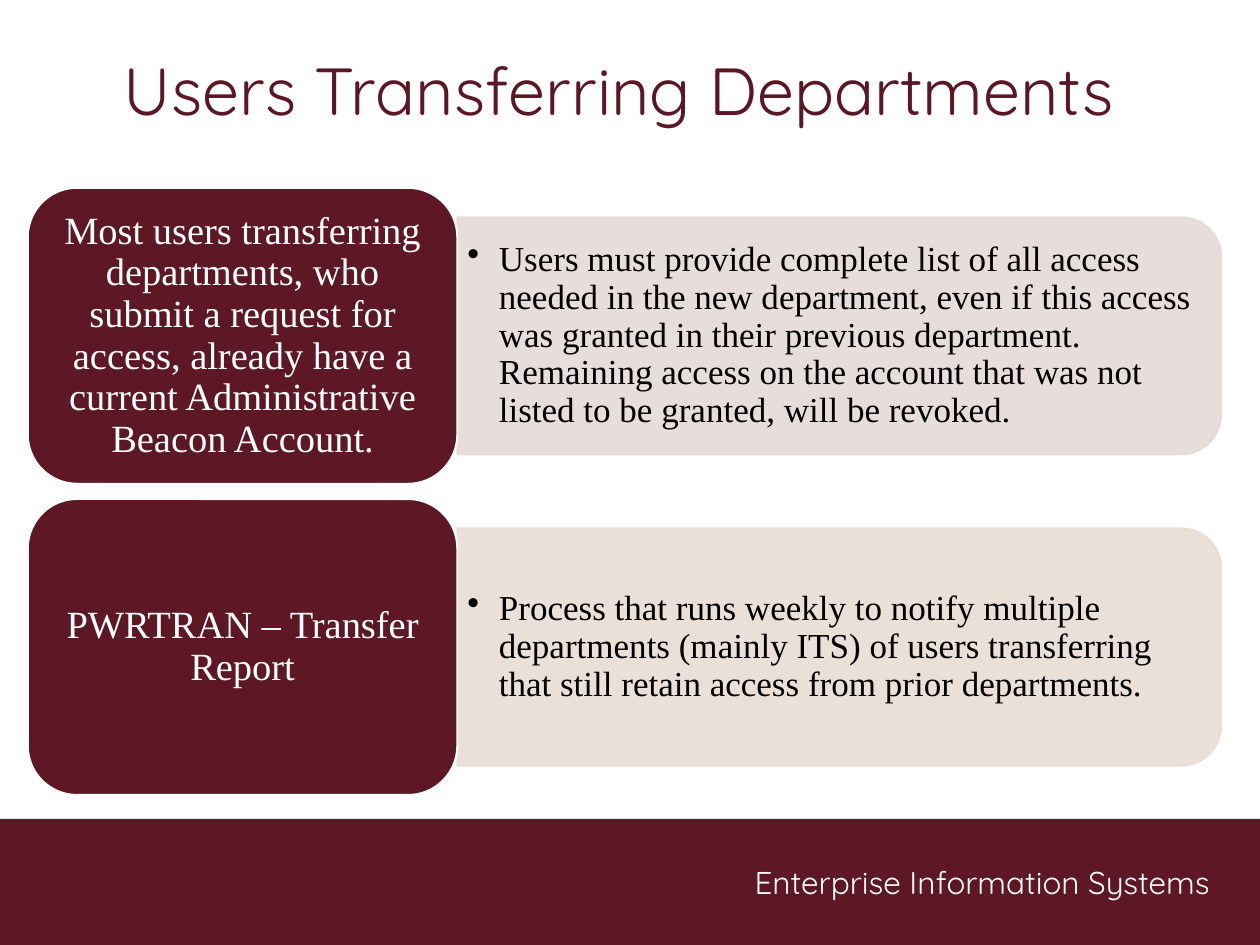
import pptx
import pptx.util
import pptx.dml.color
import pptx.enum.shapes
import pptx.enum.text
import pptx.oxml.ns
import lxml.etree

TITLE = "Users Transferring Departments"
FOOT = "Enterprise Information Systems"
ROWS = [
    ("Most users transferring departments, who submit a request for access, "
     "already have a current Administrative Beacon Account.",
     "Users must provide complete list of all access needed in the new "
     "department, even if this access was granted in their previous department. "
     "Remaining access on the account that was not listed to be granted, will be revoked.",
     "E5DAD8"),
    ("PWRTRAN – Transfer Report",
     "Process that runs weekly to notify multiple departments (mainly ITS) of "
     "users transferring that still retain access from prior departments.",
     "E9DDD4"),
]
THEME = {
    "wine": "5D1725", "head": "5D1724", "white": "FFFFFF", "black": "000000",
    "sans": "Quicksand", "serif": "Times New Roman",
    "title": 38, "label": 22, "body": 20, "foot": 18, "edge": 1.25, "alpha": 90,
}

Inches, Pt = pptx.util.Inches, pptx.util.Pt
KIND = pptx.enum.shapes.MSO_SHAPE
ALIGN = pptx.enum.text.PP_ALIGN
MID = pptx.enum.text.MSO_ANCHOR.MIDDLE
TOP = pptx.enum.text.MSO_ANCHOR.TOP
qn = pptx.oxml.ns.qn


def rgb(name):
    return pptx.dml.color.RGBColor.from_string(THEME.get(name, name))


def apply(item, form):
    for key, val in form.items():
        setattr(item, key, val)


def block(slide, kind, box, fill, edge=None, turn=0, alpha=None):
    shape = slide.shapes.add_shape(kind, *map(Inches, box))
    shape.shadow.inherit = False
    shape.rotation = turn
    shape.fill.solid()
    shape.fill.fore_color.rgb = rgb(fill)
    if edge:
        shape.line.color.rgb = rgb(edge)
        shape.line.width = Pt(THEME["edge"])
    else:
        shape.line.fill.background()
    if alpha:
        for tint in shape._element.spPr.iter(qn("a:srgbClr")):
            lxml.etree.SubElement(tint, qn("a:alpha"), val=str(alpha * 1000))


def label(slide, box, text, role, face, tone, align, pad=(0.1, 0.05),
          anchor=MID, space=None, dot=False):
    frame = slide.shapes.add_textbox(*map(Inches, box)).text_frame
    side, cap = map(Inches, pad)
    apply(frame, {"word_wrap": True, "vertical_anchor": anchor,
                  "margin_left": side, "margin_right": side,
                  "margin_top": cap, "margin_bottom": cap})
    para = frame.paragraphs[0]
    para.text = text
    apply(para, {"alignment": align, "line_spacing": space})
    if dot:
        props = para._p.get_or_add_pPr()
        props.set("marL", str(Inches(0.25)))
        props.set("indent", str(-Inches(0.25)))
        lxml.etree.SubElement(props, qn("a:buChar"), char="•")
    font = para.runs[0].font
    apply(font, {"name": THEME[face], "size": Pt(THEME[role])})
    font.color.rgb = rgb(tone)


def build():
    deck = pptx.Presentation()
    apply(deck, {"slide_width": Inches(10), "slide_height": Inches(7.5)})
    slide = deck.slides.add_slide(deck.slide_layouts[6])

    block(slide, KIND.RECTANGLE, (0, 6.5, 10, 1), "wine")
    label(slide, (5.72, 6.8, 3.98, 0.4), FOOT, "foot", "sans", "white",
          ALIGN.RIGHT, anchor=TOP)
    label(slide, (0.33, 0.3, 9.17, 0.81), TITLE, "title", "sans", "head", ALIGN.CENTER)

    left, top, wide, high, step = 0.22, 1.49, 3.41, 2.35, 2.47
    span, deep, inset = 6.06, 1.88, 0.115
    edge = left + wide
    for num, (name, body, tint) in enumerate(ROWS):
        y = top + num * step
        mid = y + high / 2
        block(slide, KIND.ROUND_2_SAME_RECTANGLE,
              (edge + (span - deep) / 2, mid - span / 2, deep, span),
              tint, tint, 90, THEME["alpha"])
        label(slide, (edge, mid - 0.85, 5.97, 1.7), body, "body", "serif", "black",
              ALIGN.LEFT, (0.08, 0.04), space=0.9, dot=True)
        block(slide, KIND.ROUNDED_RECTANGLE, (left, y, wide, high), "wine", "white")
        label(slide, (left + inset, y + inset, wide - 2 * inset, high - 2 * inset),
              name, "label", "serif", "white", ALIGN.CENTER, (0.09, 0.05), space=0.9)

    deck.save("out.pptx")


if __name__ == "__main__":
    build()
